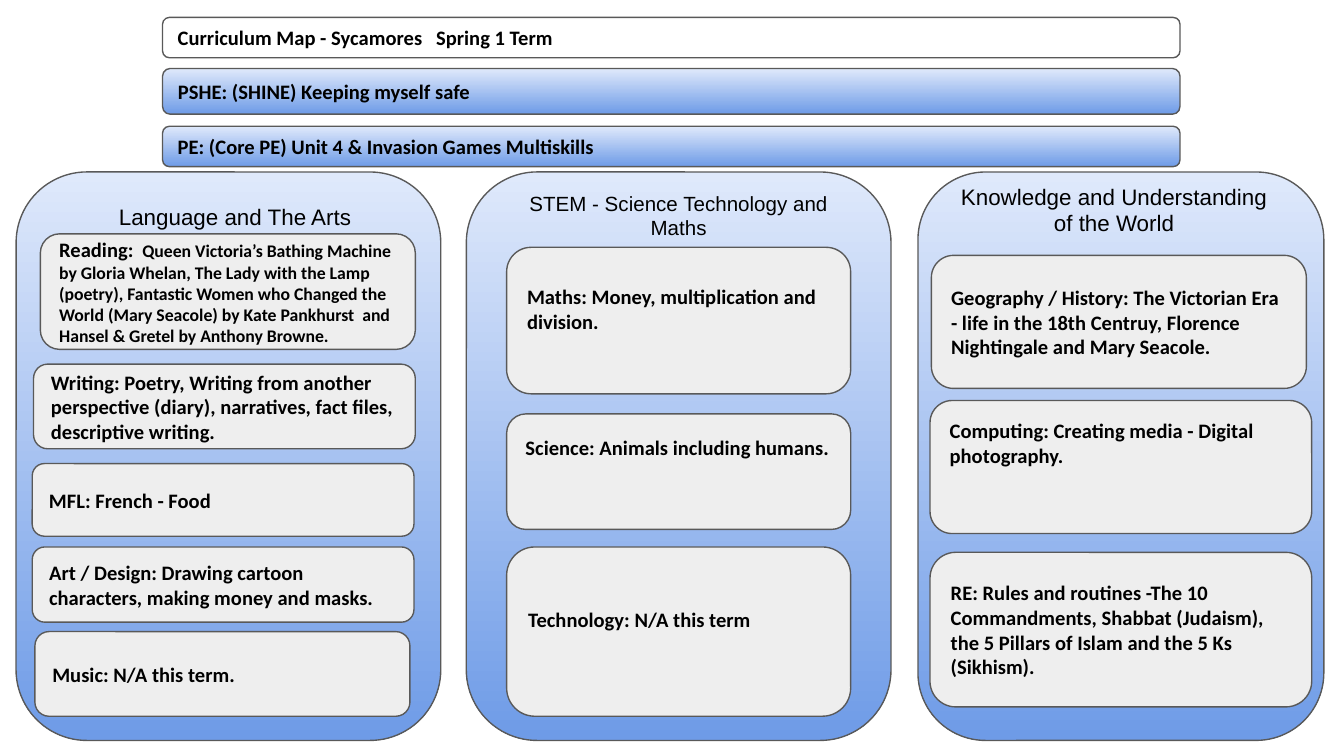
import pptx
import pptx.dml.color
import pptx.enum.shapes
import pptx.enum.text
import pptx.util

Inches = pptx.util.Inches
Pt = pptx.util.Pt
Align = pptx.enum.text.PP_ALIGN
Anchor = pptx.enum.text.MSO_ANCHOR

COLOURS = {
    "pale blue": "DFE9FB",
    "deep blue": "6E9BE7",
    "card": "EEEEEE",
    "outline": "595959",
    "text": "000000",
}
LINE_HEIGHT = 0.18  # one 11 pt line, in inches

# Bars: top, height, shaded, text
BARS = [
    (0.13, 0.30, False, "Curriculum Map - Sycamores   Spring 1 Term"),
    (0.51, 0.34, True, "PSHE: (SHINE) Keeping myself safe"),
    (0.94, 0.30, True, "PE: (Core PE) Unit 4 & Invasion Games Multiskills"),
]

# Columns: panel box, heading (offset box, size, text) and cards.
# Cards: offset box, lines of room below the text, spans of (text, size)
COLUMNS = [
    {
        "box": (0.12, 1.28, 3.16, 4.23),
        "heading": ((0.35, 0.13, 2.56, 0.34), 12, "Language and The Arts"),
        "cards": [
            ((0.18, 0.46, 2.79, 0.86), 0, [
                ("Reading: ", 11),
                (" Queen Victoria’s Bathing Machine by Gloria Whelan, The Lady with "
                 "the Lamp (poetry), Fantastic Women who Changed the World (Mary "
                 "Seacole) by Kate Pankhurst  and Hansel & Gretel by Anthony Browne.",
                 9.5)]),
            ((0.13, 1.43, 2.84, 0.63), 0, [
                ("Writing: Poetry, Writing from another perspective (diary), "
                 "narratives, fact files, descriptive writing.", 11)]),
            ((0.12, 2.17, 2.84, 0.54), 0, [("MFL: French - Food", 11)]),
            ((0.12, 2.79, 2.84, 0.56), 0, [
                ("Art / Design: Drawing cartoon characters, making money and masks.",
                 11)]),
            ((0.14, 3.42, 2.79, 0.63), 0, [("Music: N/A this term.", 11)]),
        ],
    },
    {
        "box": (3.47, 1.28, 3.16, 4.23),
        "heading": ((0.30, 0.04, 2.56, 0.30), 11,
                    "STEM - Science Technology and Maths"),
        "cards": [
            ((0.30, 0.56, 2.56, 1.09), 1, [
                ("Maths: Money, multiplication and division.", 11)]),
            ((0.30, 1.80, 2.56, 0.86), 2, [
                ("Science: Animals including humans.", 11)]),
            ((0.30, 2.79, 2.56, 1.26), 1, [("Technology: N/A this term", 11)]),
        ],
    },
    {
        "box": (6.83, 1.28, 3.02, 4.23),
        "heading": ((0.18, -0.02, 2.56, 0.63), 12,
                    "Knowledge and Understanding of the World"),
        "cards": [
            ((0.10, 0.62, 2.79, 0.99), 0, [
                ("Geography / History: The Victorian Era - life in the 18th Centruy, "
                 "Florence Nightingale and Mary Seacole.", 11)]),
            ((0.09, 1.70, 2.84, 0.99), 2, [
                ("Computing: Creating media - Digital photography.", 11)]),
            ((0.09, 2.83, 2.84, 1.15), 0, [
                ("RE: Rules and routines -The 10 Commandments, Shabbat (Judaism), "
                 "the 5 Pillars of Islam and the 5 Ks (Sikhism).", 11)]),
        ],
    },
]


def rgb(name):
    return pptx.dml.color.RGBColor.from_string(COLOURS[name])


def inside(box, offset):
    """Turn an offset box into a slide box."""
    return box[0] + offset[0], box[1] + offset[1], offset[2], offset[3]


def write(shape, spans, font, bold, align, anchor, room_below=0):
    frame = shape.text_frame
    frame.word_wrap = True
    frame.vertical_anchor = anchor
    frame.margin_left = frame.margin_right = frame.margin_top = Inches(0.1)
    frame.margin_bottom = Inches(0.1 + room_below * LINE_HEIGHT)
    para = frame.paragraphs[0]
    para.alignment = align
    for text, size in spans:
        span = para.add_run()
        span.text = text
        span.font.name = font
        span.font.size = Pt(size)
        span.font.bold = bold
        span.font.color.rgb = rgb("text")


def add_rounded(page, box):
    shape = page.shapes.add_shape(
        pptx.enum.shapes.MSO_SHAPE.FLOWCHART_ALTERNATE_PROCESS, *map(Inches, box))
    shape.shadow.inherit = False
    shape.line.color.rgb = rgb("outline")
    shape.line.width = Pt(0.75)
    return shape


def shade(shape):
    """Fill from pale blue at the top to deep blue at the bottom."""
    shape.fill.gradient()
    shape.fill.gradient_angle = 270
    stops = shape.fill.gradient_stops
    for stop, position, name in zip(stops, (0, 1), ("pale blue", "deep blue")):
        stop.position = position
        stop.color.rgb = rgb(name)


def add_bar(page, box, shaded, text):
    bar = add_rounded(page, box)
    if shaded:
        shade(bar)
    else:
        bar.fill.background()
    write(bar, [(text, 11)], "Calibri", True, Align.LEFT, Anchor.MIDDLE)


def add_column(page, box, heading, cards):
    # Panel
    shade(add_rounded(page, box))

    # Heading
    offset, size, text = heading
    title = page.shapes.add_textbox(*map(Inches, inside(box, offset)))
    write(title, [(text, size)], "Arial", False, Align.CENTER, Anchor.TOP)

    # Subject cards
    for offset, room_below, spans in cards:
        card = add_rounded(page, inside(box, offset))
        card.fill.solid()
        card.fill.fore_color.rgb = rgb("card")
        write(card, spans, "Calibri", True, Align.LEFT, Anchor.MIDDLE, room_below)


def main():
    deck = pptx.Presentation()
    deck.slide_width = Inches(10)
    deck.slide_height = deck.slide_width * 9 // 16
    page = deck.slides.add_slide(deck.slide_layouts[6])

    for column in COLUMNS:
        add_column(page, **column)
    for top, height, shaded, text in BARS:
        add_bar(page, (1.21, top, 7.57, height), shaded, text)

    deck.save("out.pptx")


if __name__ == "__main__":
    main()
